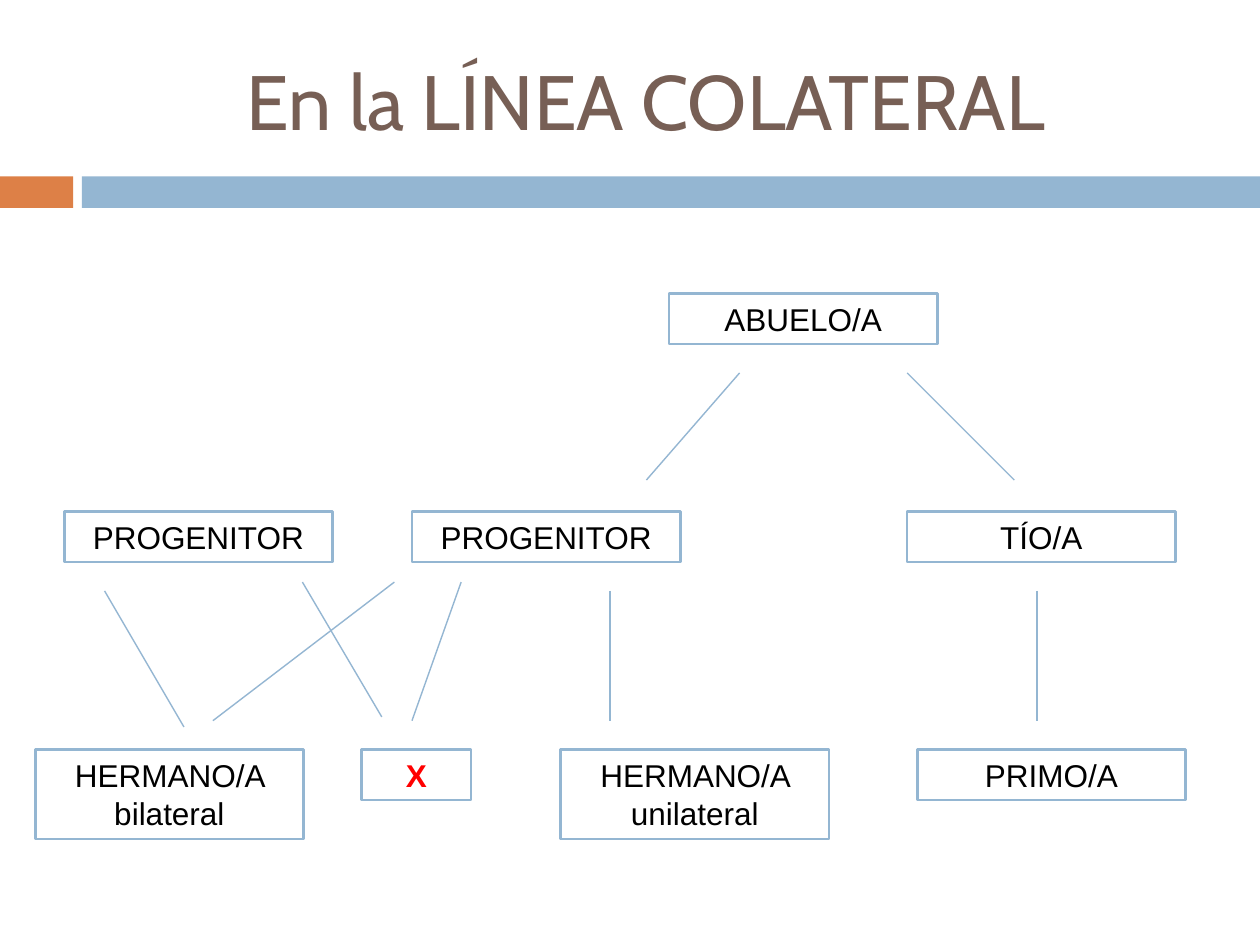
from dataclasses import dataclass

from lxml import etree
from pptx import Presentation
from pptx.dml.color import RGBColor
from pptx.enum.shapes import MSO_CONNECTOR, MSO_SHAPE
from pptx.enum.text import MSO_ANCHOR, MSO_AUTO_SIZE, PP_ALIGN
from pptx.oxml.ns import qn
from pptx.slide import Slide
from pptx.text.text import TextFrame
from pptx.util import Inches, Pt

RECTANGLE = MSO_SHAPE.RECTANGLE
STRAIGHT = MSO_CONNECTOR.STRAIGHT
CENTER = PP_ALIGN.CENTER
TOP, MIDDLE = MSO_ANCHOR.TOP, MSO_ANCHOR.MIDDLE
GROW = MSO_AUTO_SIZE.SHAPE_TO_FIT_TEXT


@dataclass(frozen=True)
class Theme:
    blue: RGBColor = RGBColor(0x94, 0xB6, 0xD2)
    orange: RGBColor = RGBColor(0xDD, 0x80, 0x47)
    brown: RGBColor = RGBColor(0x77, 0x5F, 0x55)
    black: RGBColor = RGBColor(0, 0, 0)
    red: RGBColor = RGBColor(0xFF, 0, 0)
    title_font: str = "Cabin"
    body_font: str = "Arial"
    title_size: float = 44
    body_size: float = 18
    box_line: float = 1.5
    link_line: float = 0.79


@dataclass(frozen=True)
class Relative:
    label: str
    left: float
    top: float
    width: float = 2.13
    height: float = 0.4
    excluded: bool = False


@dataclass(frozen=True)
class Link:
    x1: float
    y1: float
    x2: float
    y2: float


THEME = Theme()
GRANDPARENT_ROW, PARENT_ROW, CHILD_ROW = 2.33, 4.06, 5.95
TWO_LINES = 0.71

RELATIVES = [
    Relative("ABUELO/A", 5.31, GRANDPARENT_ROW),
    Relative("PROGENITOR", 0.51, PARENT_ROW),
    Relative("PROGENITOR", 3.27, PARENT_ROW),
    Relative("TÍO/A", 7.2, PARENT_ROW),
    Relative("HERMANO/A bilateral", 0.28, CHILD_ROW, height=TWO_LINES),
    Relative("X", 2.87, CHILD_ROW, width=0.87, excluded=True),
    Relative("HERMANO/A unilateral", 4.45, CHILD_ROW, height=TWO_LINES),
    Relative("PRIMO/A", 7.28, CHILD_ROW),
]

LINKS = [
    Link(5.87, 2.96, 5.13, 3.81),
    Link(7.2, 2.96, 8.05, 3.81),
    Link(0.83, 4.69, 1.46, 5.77),
    Link(2.4, 4.62, 3.03, 5.69),
    Link(3.13, 4.62, 1.69, 5.72),
    Link(3.66, 4.62, 3.27, 5.72),
    Link(4.84, 4.69, 4.84, 5.72),
    Link(8.23, 4.69, 8.23, 5.72),
]


def write_centered(frame: TextFrame, text: str, font: str, size: float,
                   color: RGBColor, bold: bool = False) -> None:
    frame.word_wrap = True
    paragraph = frame.paragraphs[0]
    paragraph.alignment = CENTER
    run = paragraph.add_run()
    run.text = text
    run.font.name = font
    run.font.size = Pt(size)
    run.font.bold = bold
    run.font.color.rgb = color


def add_band(slide: Slide, left: float, width: float, color: RGBColor) -> None:
    band = slide.shapes.add_shape(
        RECTANGLE, Inches(left), Inches(1.4), Inches(width), Inches(0.25))
    band.shadow.inherit = False
    band.fill.solid()
    band.fill.fore_color.rgb = color
    band.line.fill.background()


def add_title(slide: Slide, text: str) -> None:
    title = slide.shapes.add_textbox(
        Inches(0.67), Inches(0.25), Inches(8.92), Inches(1.08))
    title.text_frame.vertical_anchor = MIDDLE
    write_centered(title.text_frame, text, THEME.title_font,
                   THEME.title_size, THEME.brown)


def add_relative(slide: Slide, relative: Relative) -> None:
    box = slide.shapes.add_shape(
        RECTANGLE, Inches(relative.left), Inches(relative.top),
        Inches(relative.width), Inches(relative.height))
    box.shadow.inherit = False
    box.fill.background()
    box.line.color.rgb = THEME.blue
    box.line.width = Pt(THEME.box_line)
    box.text_frame.vertical_anchor = TOP
    box.text_frame.auto_size = GROW
    color = THEME.red if relative.excluded else THEME.black
    write_centered(box.text_frame, relative.label, THEME.body_font,
                   THEME.body_size, color, bold=relative.excluded)


def add_link(slide: Slide, link: Link) -> None:
    line = slide.shapes.add_connector(
        STRAIGHT, Inches(link.x1), Inches(link.y1),
        Inches(link.x2), Inches(link.y2))
    line.line.color.rgb = THEME.blue
    line.line.width = Pt(THEME.link_line)
    etree.SubElement(line._element.spPr, qn("a:effectLst"))


def main() -> None:
    deck = Presentation()
    deck.slide_width, deck.slide_height = Inches(10), Inches(7.5)
    slide = deck.slides.add_slide(deck.slide_layouts[6])
    add_band(slide, 0, 0.58, THEME.orange)
    add_band(slide, 0.65, 9.35, THEME.blue)
    add_title(slide, "En la LÍNEA COLATERAL")
    for relative in RELATIVES:
        add_relative(slide, relative)
    for link in LINKS:
        add_link(slide, link)
    deck.save("out.pptx")


if __name__ == "__main__":
    main()
